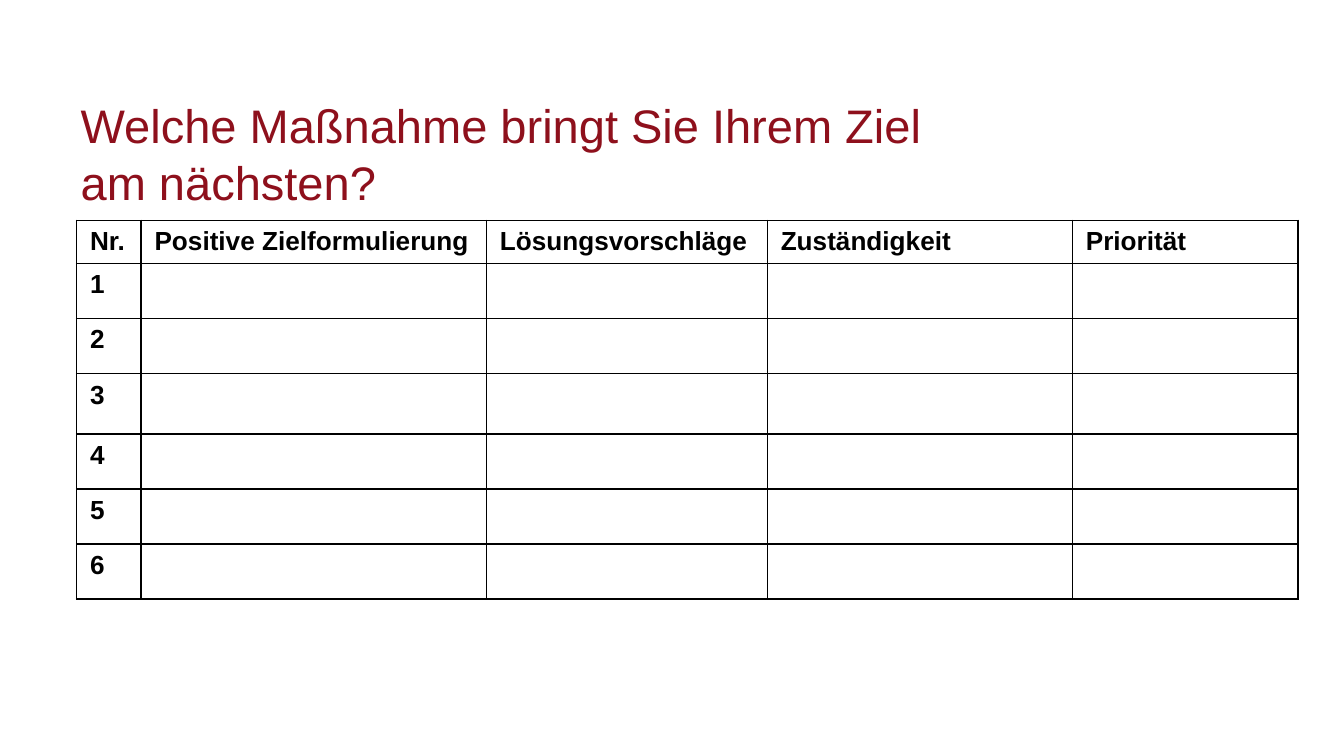
from lxml import etree
from pptx import Presentation
from pptx import util as u
from pptx.dml.color import RGBColor
from pptx.enum import text
from pptx.oxml import ns

RED = RGBColor(0x8E, 0x10, 0x1C)
BLACK = RGBColor(0, 0, 0)

TITLE_FONT = {"name": "Arial", "size": u.Pt(25.2), "bold": False}
CELL_FONT = {"name": "Arial", "size": u.Pt(14), "bold": True}
TITLE_FRAME = {
    "word_wrap": True,
    "auto_size": text.MSO_AUTO_SIZE.NONE,
    "vertical_anchor": text.MSO_ANCHOR.TOP,
    "margin_left": u.Inches(0.1),
    "margin_right": u.Inches(0.1),
    "margin_top": u.Inches(0.05),
    "margin_bottom": u.Inches(0.05),
}

HEADERS = ["Nr.", "Positive Zielformulierung", "Lösungsvorschläge",
           "Zuständigkeit", "Priorität"]
COLUMN_WIDTHS = [0.48, 2.57, 2.09, 2.27, 1.68]
ROW_HEIGHTS = [0.32, 0.41, 0.41, 0.45, 0.41, 0.41, 0.41]


def apply_format(target, values):
    for name, value in values.items():
        setattr(target, name, value)


def add_borders(cell, color, width):
    properties = cell._tc.get_or_add_tcPr()
    for side in ("a:lnL", "a:lnR", "a:lnT", "a:lnB"):
        line = etree.SubElement(properties, ns.qn(side), w=str(u.Pt(width)))
        fill = etree.SubElement(line, ns.qn("a:solidFill"))
        etree.SubElement(fill, ns.qn("a:srgbClr"), val=str(color))


def place_title(slide, left, top, width, height):
    title = slide.shapes.title
    apply_format(title, {"left": u.Inches(left), "top": u.Inches(top),
                         "width": u.Inches(width), "height": u.Inches(height)})
    frame = title.text_frame
    frame.text = "Welche Maßnahme bringt Sie Ihrem Ziel am nächsten?"
    apply_format(frame, TITLE_FRAME)
    paragraph = frame.paragraphs[0]
    apply_format(paragraph, {"alignment": text.PP_ALIGN.LEFT,
                             "line_spacing": 1.0, "space_before": u.Pt(0)})
    apply_format(paragraph.runs[0].font, TITLE_FONT)
    paragraph.runs[0].font.color.rgb = RED


def place_measures_table(slide, left, top, width, height):
    table = slide.shapes.add_table(
        len(ROW_HEIGHTS), len(HEADERS), u.Inches(left), u.Inches(top),
        u.Inches(width), u.Inches(height)).table
    apply_format(table, {"first_row": False, "horz_banding": False})
    for column, column_width in zip(table.columns, COLUMN_WIDTHS):
        column.width = u.Inches(column_width)
    for row_index, (row, row_height) in enumerate(zip(table.rows, ROW_HEIGHTS)):
        row.height = u.Inches(row_height)
        numbered = [str(row_index)] + [""] * (len(HEADERS) - 1)
        labels = HEADERS if row_index == 0 else numbered
        for cell, label in zip(row.cells, labels):
            add_borders(cell, BLACK, 1)
            cell.fill.background()
            paragraph = cell.text_frame.paragraphs[0]
            if label:
                run = paragraph.add_run()
                run.text = label
                apply_format(run.font, CELL_FONT)
                run.font.color.rgb = BLACK


def main():
    presentation = Presentation()
    presentation.slide_width = u.Inches(10)
    presentation.slide_height = presentation.slide_width * 9 // 16
    slide = presentation.slides.add_slide(presentation.slide_layouts[5])
    place_title(slide, 0.5, 0.67, 6.98, 0.58)
    place_measures_table(slide, 0.57, 1.64, sum(COLUMN_WIDTHS), sum(ROW_HEIGHTS))
    presentation.save("out.pptx")


if __name__ == "__main__":
    main()
